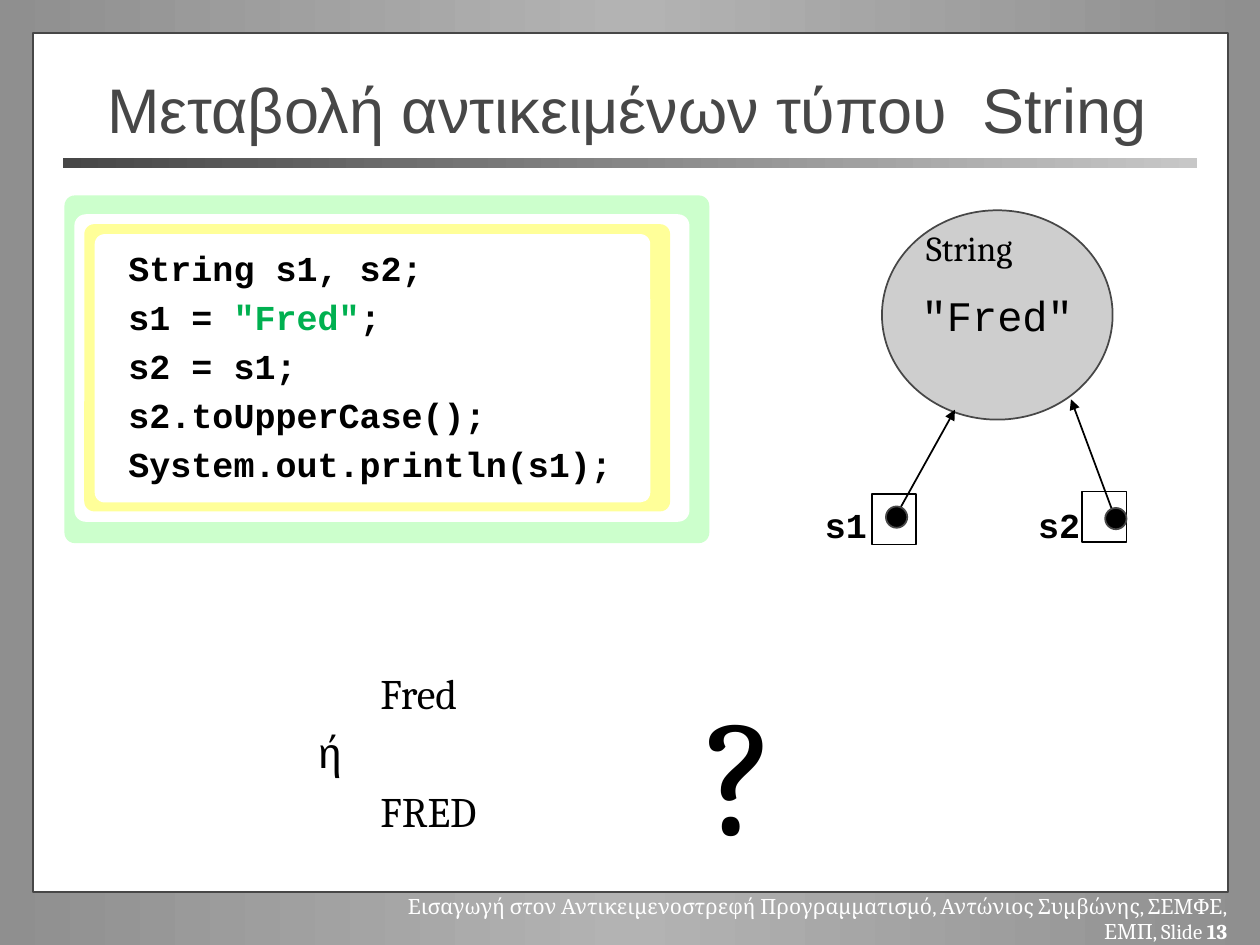
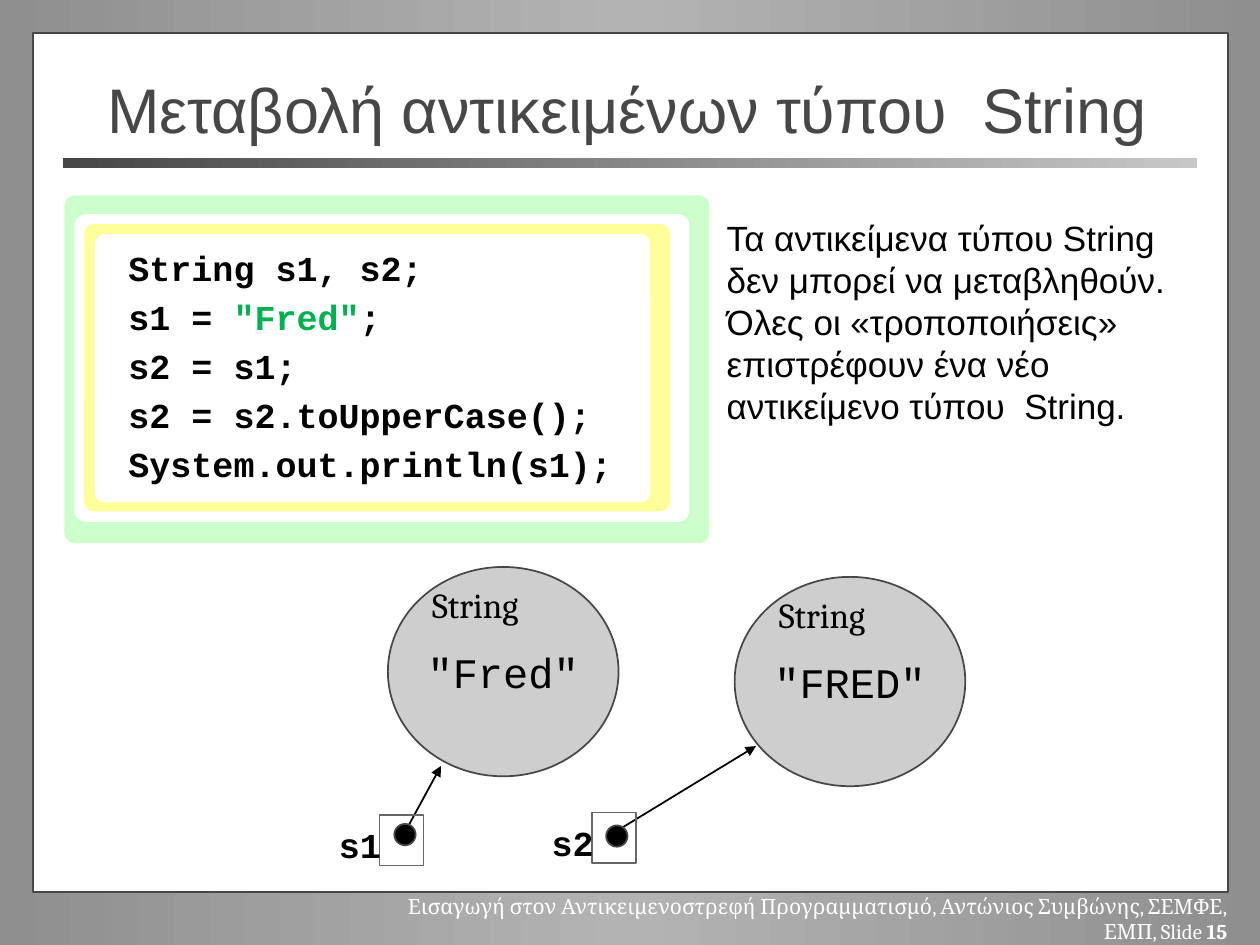
"""Build two slides on changing String objects."""
from copy import deepcopy

from lxml import etree
from pptx import Presentation
from pptx import util as u
from pptx.dml.color import RGBColor
from pptx.enum import shapes as es, text as et
from pptx.oxml import ns


class Theme:
    dark, mid, pale = "474747", "676767", "C7C7C7"
    edge, glow, disc = "8F8F8F", "B3B3B3", "CECECE"
    white, black, green = "FFFFFF", "000000", "00B050"
    mint, lemon = "CCFFCC", "FFFF99"
    title = dict(name="Arial", size=36, color=dark)
    body = dict(name="Arial", size=20, color=black)
    code = dict(name="Courier New", size=20, color=black, bold=True)
    value = dict(name="Courier New", size=24, color=black)
    kind = dict(name="Cambria", size=20, color=black)
    reply = dict(name="Cambria", size=24, color=black)
    query = dict(name="Cambria", size=96, color=black)
    foot = dict(name="Cambria", size=12, color=white)


def draw(page, form, at, fill=None, line=None):
    item = page.shapes.add_shape(form, *map(u.Cm, at))
    item.shadow.inherit = False
    if fill:
        item.fill.solid()
        item.fill.fore_color.rgb = RGBColor.from_string(fill)
    else:
        item.fill.background()
    if line:
        item.line.color.rgb = RGBColor.from_string(line)
        item.line.width = u.Pt(1)
    else:
        item.line.fill.background()
    return item


def write(host, rows, style, lead=True, wrap=True, **look):
    frame = host.text_frame
    frame.word_wrap = wrap
    frame.vertical_anchor = look.get("anchor", et.MSO_ANCHOR.TOP)
    for i, row in enumerate(rows):
        para = frame.paragraphs[0] if i == 0 else frame.add_paragraph()
        para.alignment = look.get("align", et.PP_ALIGN.LEFT)
        if lead:
            gap = etree.SubElement(para._p.get_or_add_pPr(), ns.qn("a:spcBef"))
            etree.SubElement(gap, ns.qn("a:spcPct")).set("val", "20000")
        for words, extra in row:
            run = para.add_run()
            run.text = words
            form = {**style, **extra}
            run.font.color.rgb = RGBColor.from_string(form.pop("color"))
            form["size"] = u.Pt(form["size"])
            for key, val in form.items():
                setattr(run.font, key, val)


RECT = es.MSO_SHAPE.RECTANGLE
OVAL = es.MSO_SHAPE.OVAL
ROUND = es.MSO_SHAPE.ROUNDED_RECTANGLE
FRAMES = [
    ((1.3, 3.94, 13, 7.01), 0.03, Theme.mint),
    ((1.5, 4.32, 12.4, 6.2), 0.037, Theme.white),
    ((1.7, 4.52, 11.81, 5.79), 0.035, Theme.lemon),
    ((1.91, 4.72, 11.2, 5.41), 0.037, Theme.white),
]
PAGES = [
    dict(
        num="13", call="s2.toUpperCase();", rim=Theme.black,
        discs=[('"Fred"', 17.78, 4.24)],
        refs=[
            ("s1", (16.38, 10.03), (17.58, 9.96), (17.86, 10.21), (18.11, 10.31, 19.25, 8.26)),
            ("s2", (20.68, 10.03), (21.82, 9.91), (22.28, 10.24), (22.43, 10.31, 21.59, 8.05)),
        ],
        notes=[
            ((6.15, 13.34, 8.71, 3.68), ["\tFred", "ή", "\tFRED"], Theme.reply),
            ((13.97, 13.34, 2.01, 4.32), ["?"], Theme.query),
        ],
    ),
    dict(
        num="15", call="s2 = s2.toUpperCase();", rim=Theme.mid,
        discs=[('"Fred"', 7.82, 11.43), ('"FRED"', 14.81, 11.63)],
        refs=[
            ("s1", (6.58, 16.48), (7.65, 16.43), (7.95, 16.61), (8.2, 16.71, 8.89, 15.44)),
            ("s2", (10.87, 16.43), (11.94, 16.38), (12.22, 16.64), (12.5, 16.71, 15.24, 15.04)),
        ],
        notes=[
            ((14.4, 4.24, 9.96, 4.47),
             ["Τα αντικείμενα τύπου String δεν μπορεί να μεταβληθούν. "
              "Όλες οι «τροποποιήσεις» επιστρέφουν ένα νέο "
              "αντικείμενο τύπου  String."], Theme.body),
        ],
    ),
]

deck = Presentation()
deck.slide_width, deck.slide_height = u.Cm(25.4), u.Cm(19.05)

for data in PAGES:
    page = deck.slides.add_slide(deck.slide_layouts[6])
    back = page.background.fill
    back.gradient()
    back.gradient_angle = 0
    stops = page.element.find(".//" + ns.qn("a:gsLst"))
    stops.insert(1, deepcopy(stops[0]))
    tints = [Theme.edge, Theme.glow, Theme.edge]
    for i, (stop, tint) in enumerate(zip(back.gradient_stops, tints)):
        stop.position = i / 2
        stop.color.rgb = RGBColor.from_string(tint)

    draw(page, RECT, (0.66, 0.66, 24.1, 17.32), Theme.white, Theme.dark)
    bar = draw(page, RECT, (1.27, 3.18, 22.86, 0.2))
    bar.fill.gradient()
    bar.fill.gradient_angle = 0
    for stop, tint in zip(bar.fill.gradient_stops, [Theme.dark, Theme.pale]):
        stop.color.rgb = RGBColor.from_string(tint)

    foot = page.shapes.add_textbox(*map(u.Cm, (7.21, 17.88, 17.78, 0.76)))
    credit = ("Εισαγωγή στον Αντικειμενοστρεφή Προγραμματισμό, "
              "Αντώνιος Συμβώνης, ΣΕΜΦΕ, ΕΜΠ, Slide ")
    write(foot, [[(credit, {}), (data["num"], {"bold": True})]], Theme.foot,
          lead=False, align=et.PP_ALIGN.RIGHT)

    for at, bend, fill in FRAMES:
        draw(page, ROUND, at, fill).adjustments[0] = bend

    title = page.shapes.add_textbox(*map(u.Cm, (1.91, 1.4, 21.59, 1.57)))
    write(title, [[("Μεταβολή αντικειμένων τύπου  String", {})]], Theme.title,
          lead=False, anchor=et.MSO_ANCHOR.MIDDLE)

    code = page.shapes.add_textbox(*map(u.Cm, (2.34, 4.85, 10.34, 5.21)))
    rows = [
        [("String s1, s2;", {})],
        [("s1 = ", {}), ('"Fred"', {"color": Theme.green}), (";", {})],
        [("s2 = s1;", {})],
        [(data["call"], {})],
        [("System.out.println(s1);", {})],
    ]
    write(code, rows, Theme.code, wrap=False)

    for at, lines, style in data["notes"]:
        note = page.shapes.add_textbox(*map(u.Cm, at))
        write(note, [[(line, {})] for line in lines], style)

    for value, x, y in data["discs"]:
        disc = draw(page, OVAL, (x, y, 4.65, 4.22), Theme.disc, Theme.dark)
        write(disc, [[(value, {})]], Theme.value, lead=False, wrap=False,
              align=et.PP_ALIGN.CENTER, anchor=et.MSO_ANCHOR.MIDDLE)
        kind = page.shapes.add_textbox(*map(u.Cm, (x + 0.64, y + 0.21, 2.34, 1.09)))
        write(kind, [[("String", {})]], Theme.kind)

    for name, tag, box, dot, ends in data["refs"]:
        arrow = page.shapes.add_connector(es.MSO_CONNECTOR.STRAIGHT, *map(u.Cm, ends))
        arrow.line.color.rgb = RGBColor.from_string(Theme.black)
        arrow.line.width = u.Pt(1)
        tip = etree.SubElement(arrow.line._get_or_add_ln(), ns.qn("a:tailEnd"))
        tip.set("type", "triangle")
        etree.SubElement(arrow._element.spPr, ns.qn("a:effectLst"))
        draw(page, RECT, (*box, 0.89, 1.02), line=data["rim"])
        label = page.shapes.add_textbox(*map(u.Cm, (*tag, 1.37, 1.12)))
        write(label, [[(name, {})]], Theme.code, wrap=False)
        draw(page, OVAL, (*dot, 0.43, 0.43), Theme.black, Theme.dark)

deck.save("out.pptx")
